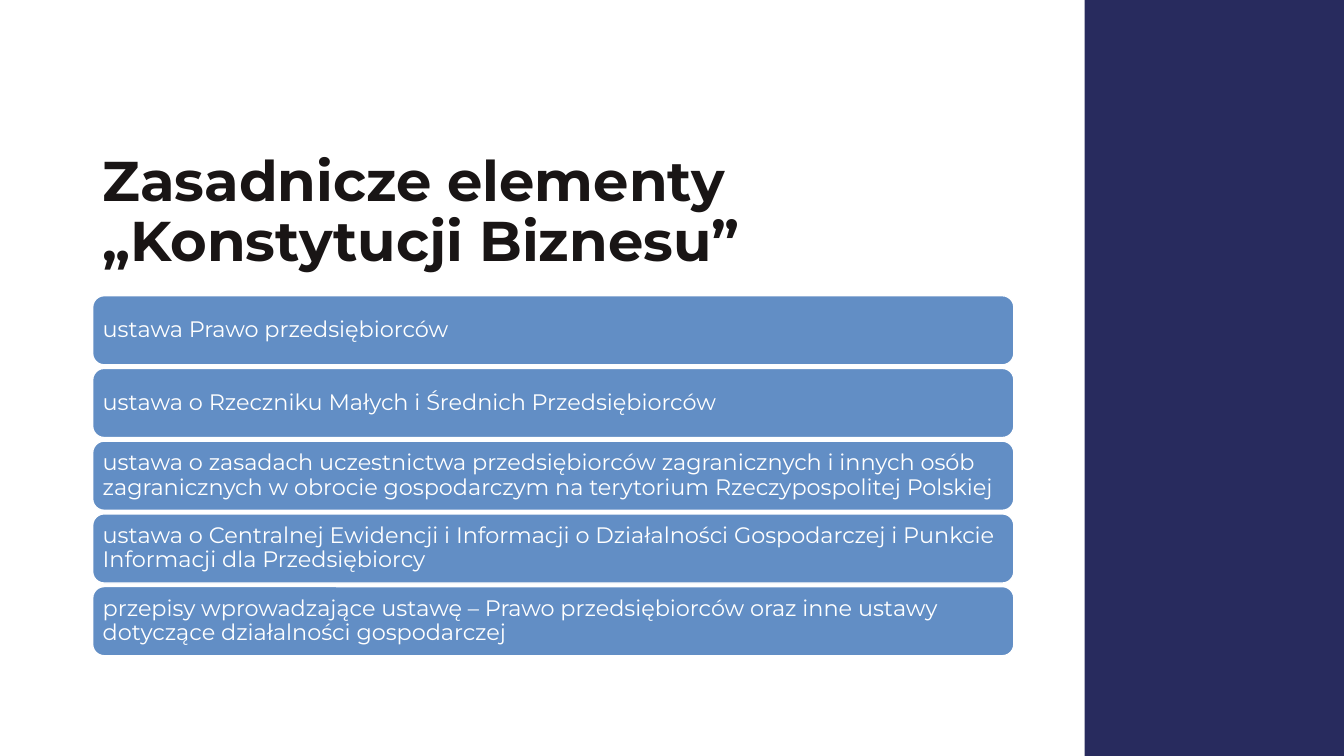
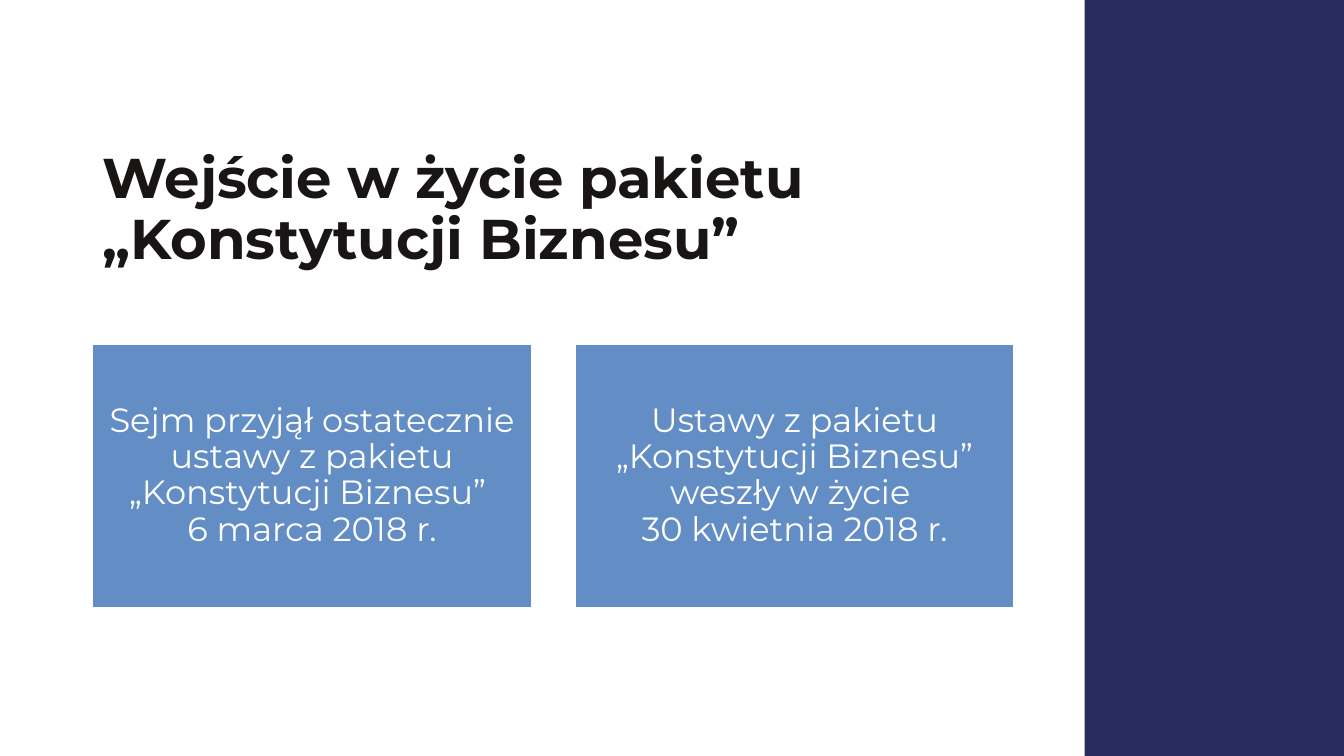
import pptx
import pptx.util
import pptx.dml.color
import pptx.enum.shapes
import pptx.enum.text

Pt = pptx.util.Pt
SHAPE = pptx.enum.shapes.MSO_SHAPE
ANCHOR = pptx.enum.text.MSO_ANCHOR
ALIGN = pptx.enum.text.PP_ALIGN

NAVY, BLUE, INK, WHITE = "282B5E", "628EC5", "191515", "FFFFFF"
WIDTH, HEIGHT = 960, 540
SIDEBAR_LEFT = 774.7
LEFT, CONTENT_WIDTH = 66.2, 658
TITLE_HEIGHT = 104.4

TITLE = {"size": Pt(40), "bold": True, "name": "Montserrat"}
BAR_TEXT = {"size": Pt(16), "name": "Montserrat"}
CARD_TEXT = {"size": Pt(24), "name": "Montserrat"}


def paint(color_owner, color):
    color_owner.rgb = pptx.dml.color.RGBColor.from_string(color)


def write(shape, text, font_format, color, align, anchor, inset_x, inset_y):
    frame = shape.text_frame
    frame.text = text
    frame_format = {
        "word_wrap": True,
        "auto_size": pptx.enum.text.MSO_AUTO_SIZE.NONE,
        "vertical_anchor": anchor,
        "margin_left": Pt(inset_x),
        "margin_right": Pt(inset_x),
        "margin_top": Pt(inset_y),
        "margin_bottom": Pt(inset_y),
    }
    for name, value in frame_format.items():
        setattr(frame, name, value)
    for paragraph in frame.paragraphs:
        paragraph.alignment = align
        paragraph.line_spacing = 0.9
        for name, value in font_format.items():
            setattr(paragraph.font, name, value)
        paint(paragraph.font.color, color)


presentation = pptx.Presentation()
presentation.slide_width = Pt(WIDTH)
presentation.slide_height = Pt(HEIGHT)
layout = presentation.slide_layouts[5]

slides = []
for title_text, title_top in (
    ("Zasadnicze elementy „Konstytucji Biznesu”", 95),
    ("Wejście w życie pakietu „Konstytucji Biznesu”", 93),
):
    slide = presentation.slides.add_slide(layout)
    title = slide.shapes.title
    title.left, title.top = Pt(LEFT), Pt(title_top)
    title.width, title.height = Pt(CONTENT_WIDTH), Pt(TITLE_HEIGHT)
    write(title, title_text, TITLE, INK, ALIGN.LEFT, ANCHOR.BOTTOM, 7.2, 3.6)
    slides.append(slide)
acts_slide, dates_slide = slides

sidebar = acts_slide.shapes.add_shape(
    SHAPE.RECTANGLE, Pt(SIDEBAR_LEFT), 0, Pt(WIDTH - SIDEBAR_LEFT), Pt(HEIGHT)
)
sidebar.shadow.inherit = False
sidebar.fill.solid()
paint(sidebar.fill.fore_color, NAVY)
sidebar.line.fill.background()
layout.shapes.element.insert(2, sidebar.element)

acts = [
    "ustawa Prawo przedsiębiorców",
    "ustawa o Rzeczniku Małych i Średnich Przedsiębiorców",
    "ustawa o zasadach uczestnictwa przedsiębiorców zagranicznych i innych osób "
    "zagranicznych w obrocie gospodarczym na terytorium Rzeczypospolitej Polskiej",
    "ustawa o Centralnej Ewidencji i Informacji o Działalności Gospodarczej "
    "i Punkcie Informacji dla Przedsiębiorcy",
    "przepisy wprowadzające ustawę – Prawo przedsiębiorców oraz inne ustawy "
    "dotyczące działalności gospodarczej",
]
dates = [
    "Sejm przyjął ostatecznie ustawy z pakietu „Konstytucji Biznesu” \n6 marca 2018 r.",
    "Ustawy z pakietu „Konstytucji Biznesu” weszły w życie \n30 kwietnia 2018 r.",
]

BAR_TOP, BAR_HEIGHT, BAR_PITCH = 211.2, 49.4, 51.95
CARD_TOP, CARD_WIDTH, CARD_HEIGHT = 246, 313.3, 188
CARD_PITCH = CONTENT_WIDTH - CARD_WIDTH

boxes = []
for index, text in enumerate(acts):
    place = (LEFT, BAR_TOP + index * BAR_PITCH, CONTENT_WIDTH, BAR_HEIGHT)
    boxes.append((acts_slide, SHAPE.ROUNDED_RECTANGLE, place, text, BAR_TEXT, ALIGN.LEFT, 4.8))
for index, text in enumerate(dates):
    place = (LEFT + index * CARD_PITCH, CARD_TOP, CARD_WIDTH, CARD_HEIGHT)
    boxes.append((dates_slide, SHAPE.RECTANGLE, place, text, CARD_TEXT, ALIGN.CENTER, 7.2))

for slide, kind, place, text, font_format, align, inset in boxes:
    shape = slide.shapes.add_shape(kind, *[Pt(length) for length in place])
    shape.shadow.inherit = False
    shape.fill.solid()
    paint(shape.fill.fore_color, BLUE)
    paint(shape.line.color, WHITE)
    shape.line.width = Pt(1)
    write(shape, text, font_format, WHITE, align, ANCHOR.MIDDLE, inset, inset)

presentation.save("out.pptx")
